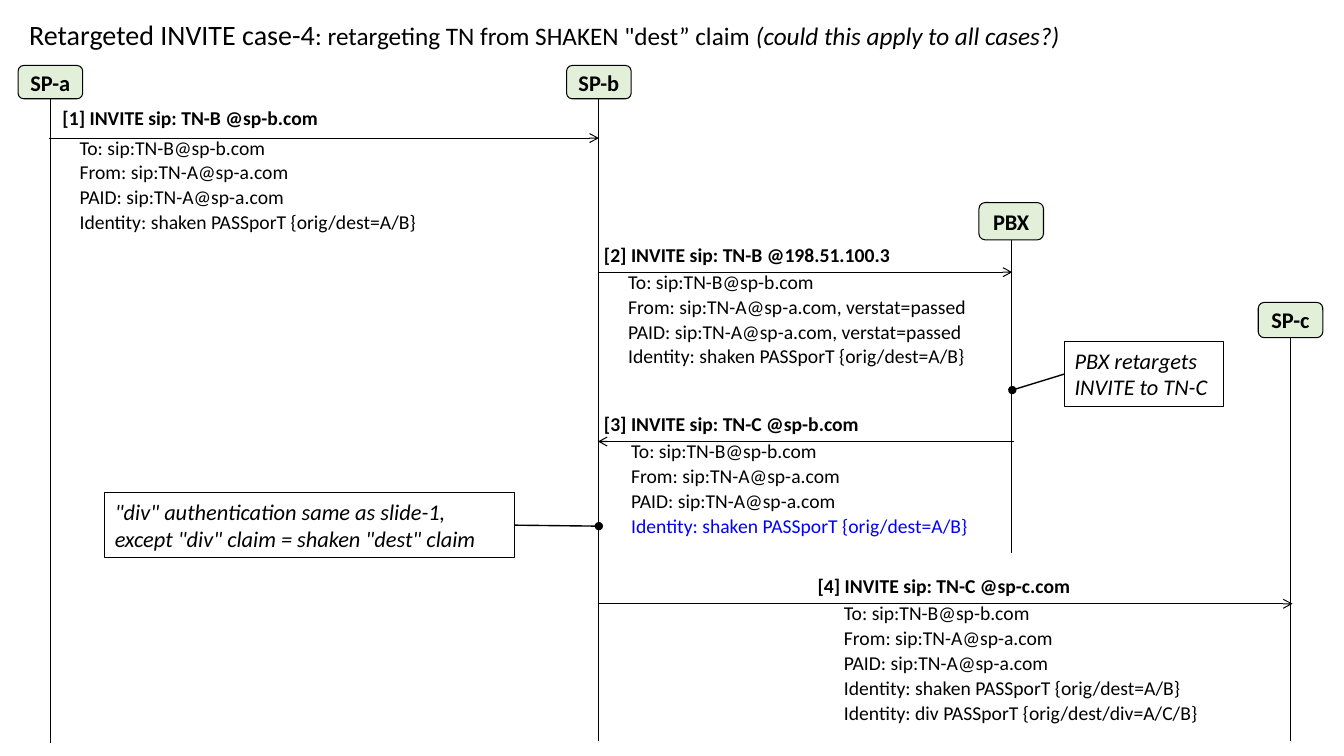
"""Build a call-flow slide: an INVITE retargeted by a PBX."""
from lxml import etree
from pptx import Presentation
from pptx import util as u
from pptx.dml.color import RGBColor
from pptx.enum import shapes, text
from pptx.oxml.ns import qn

PX = 9144
BLACK = RGBColor(0, 0, 0)
BLUE = RGBColor(0, 0, 255)
GREEN = RGBColor(0xE2, 0xF0, 0xD9)
WHITE = RGBColor(255, 255, 255)
FONT = "Calibri"

TITLE = [("Retargeted INVITE case-4", 20, False),
         (': retargeting TN from SHAKEN "dest” claim ', 18, False),
         ("(could this apply to all cases?)", 18, True)]

# name, centre x, top, height, end of lifeline
NODES = [("SP-a", 50, 65, 33, 737), ("SP-b", 594, 65, 33, 735),
         ("PBX", 1003, 201, 37, 549), ("SP-c", 1280, 300, 35, 735)]

TO = "To: sip:TN-B@sp-b.com"
FROM = "From: sip:TN-A@sp-a.com"
PAID = "PAID: sip:TN-A@sp-a.com"
IDENT = "Identity: shaken PASSporT {orig/dest=A/B}"
DIV = "Identity: div PASSporT {orig/dest/div=A/C/B}"
PASS = ", verstat=passed"

CALLS = [
    dict(head="[1] INVITE sip: TN-B @sp-b.com", box=(49, 101, 397),
         body=[TO, FROM, PAID, IDENT], list=(66, 136, 387),
         line=(49, 594, 137)),
    dict(head="[2] INVITE sip: TN-B @198.51.100.3", box=(586, 237, 422),
         body=[TO, FROM + PASS, PAID + PASS, IDENT], list=(610, 269, 399),
         line=(593, 1004, 270)),
    dict(head="[3] INVITE sip: TN-C @sp-b.com", box=(586, 404, 422),
         body=[TO, FROM, PAID, IDENT], list=(613, 437, 380),
         line=(1006, 593, 438), mark=BLUE),
    dict(head="[4] INVITE sip: TN-C @sp-c.com", box=(798, 565, 344),
         body=[TO, FROM, PAID, IDENT, DIV], list=(824, 598, 391),
         line=(594, 1282, 599), veil=(62, 68)),
]

# text, box, pointer
NOTES = [("PBX retargets INVITE to TN-C", (1056, 339, 158, 64),
          (1056, 371, 1004, 387)),
         ('"div" authentication same as slide-1, '
          'except "div" claim = shaken "dest" claim', (104, 489, 406, 64),
          (510, 521, 594, 522))]

deck = Presentation()
deck.slide_width, deck.slide_height = 1333 * PX, 750 * PX
slide = deck.slides.add_slide(deck.slide_layouts[6])


def write(shape, paras, pad=(10, 5), gap=0, lead=1, wrap=True, bold=False,
          align=text.PP_ALIGN.LEFT, anchor=text.MSO_ANCHOR.TOP):
    """Fill a shape with paragraphs of (text, size, italic, colour) runs."""
    frame = shape.text_frame
    frame.word_wrap = wrap
    frame.vertical_anchor = anchor
    frame.margin_left = frame.margin_right = pad[0] * PX
    frame.margin_top = frame.margin_bottom = pad[1] * PX
    for i, runs in enumerate(paras):
        para = frame.add_paragraph() if i else frame.paragraphs[0]
        para.alignment, para.line_spacing = align, lead
        para.space_before = u.Pt(gap)
        for words, size, slant, tint in runs:
            run = para.add_run()
            run.text = words
            font = run.font
            font.name, font.size = FONT, u.Pt(size)
            font.bold, font.italic = bold, slant
            font.color.rgb = tint


def label(box, veil=None):
    """Add a text box, with a white fill of the given opacity if any."""
    shape = slide.shapes.add_textbox(*[n * PX for n in box])
    if veil:
        shape.fill.solid()
        shape.fill.fore_color.rgb = WHITE
        tint = next(shape.element.iter(qn("a:srgbClr")))
        etree.SubElement(tint, qn("a:alpha"), val=str(veil * 1000))
    return shape


def panel(kind, box, fill=None):
    """Add an outlined preset shape."""
    shape = slide.shapes.add_shape(kind, *[n * PX for n in box])
    shape.shadow.inherit = False
    if fill is None:
        shape.fill.background()
    else:
        shape.fill.solid()
        shape.fill.fore_color.rgb = fill
    shape.line.color.rgb = BLACK
    shape.line.width = u.Pt(0.75)
    return shape


def link(ends, tip=None, width=0.75):
    """Add a straight line with an optional end mark."""
    line = slide.shapes.add_connector(shapes.MSO_CONNECTOR.STRAIGHT,
                                      *[n * PX for n in ends])
    line.line.color.rgb = BLACK
    line.line.width = u.Pt(width)
    if tip:
        etree.SubElement(line.line._get_or_add_ln(), qn("a:tailEnd"), type=tip)
    etree.SubElement(line.element.spPr, qn("a:effectLst"))


def main():
    """Draw the slide and save it."""
    write(label((19, 0, 1286, 73)), [[(*run, BLACK) for run in TITLE]],
          lead=0.9, anchor=text.MSO_ANCHOR.MIDDLE)

    for name, mid, top, high, end in NODES:
        pill = panel(shapes.MSO_SHAPE.ROUNDED_RECTANGLE,
                     (mid - 32, top, 64, high), GREEN)
        write(pill, [[(name, 16, False, BLACK)]], pad=(0, 0), wrap=False,
              bold=True, align=text.PP_ALIGN.CENTER,
              anchor=text.MSO_ANCHOR.MIDDLE)
        link((mid, top + high, mid, end))

    for call in CALLS:
        thin, thick = call.get("veil", (None, None))
        rows = call["body"]
        tints = [BLACK] * (len(rows) - 1) + [call.get("mark", BLACK)]
        write(label((*call["list"], 25 * len(rows) - 1), thick),
              [[(row, 14, False, tint)] for row, tint in zip(rows, tints)],
              pad=(13, 1), gap=2.7, lead=0.9)
        write(label((*call["box"], 35), thin),
              [[(call["head"], 14, False, BLACK)]],
              pad=(13, 7), gap=8, lead=0.9, bold=True)
        start, stop, y = call["line"]
        link((start, y, stop, y), "arrow")

    for words, box, ends in NOTES:
        write(panel(shapes.MSO_SHAPE.RECTANGLE, box),
              [[(words, 16, True, BLACK)]])
        link(ends, "oval", 1)

    deck.save("out.pptx")


if __name__ == "__main__":
    main()
